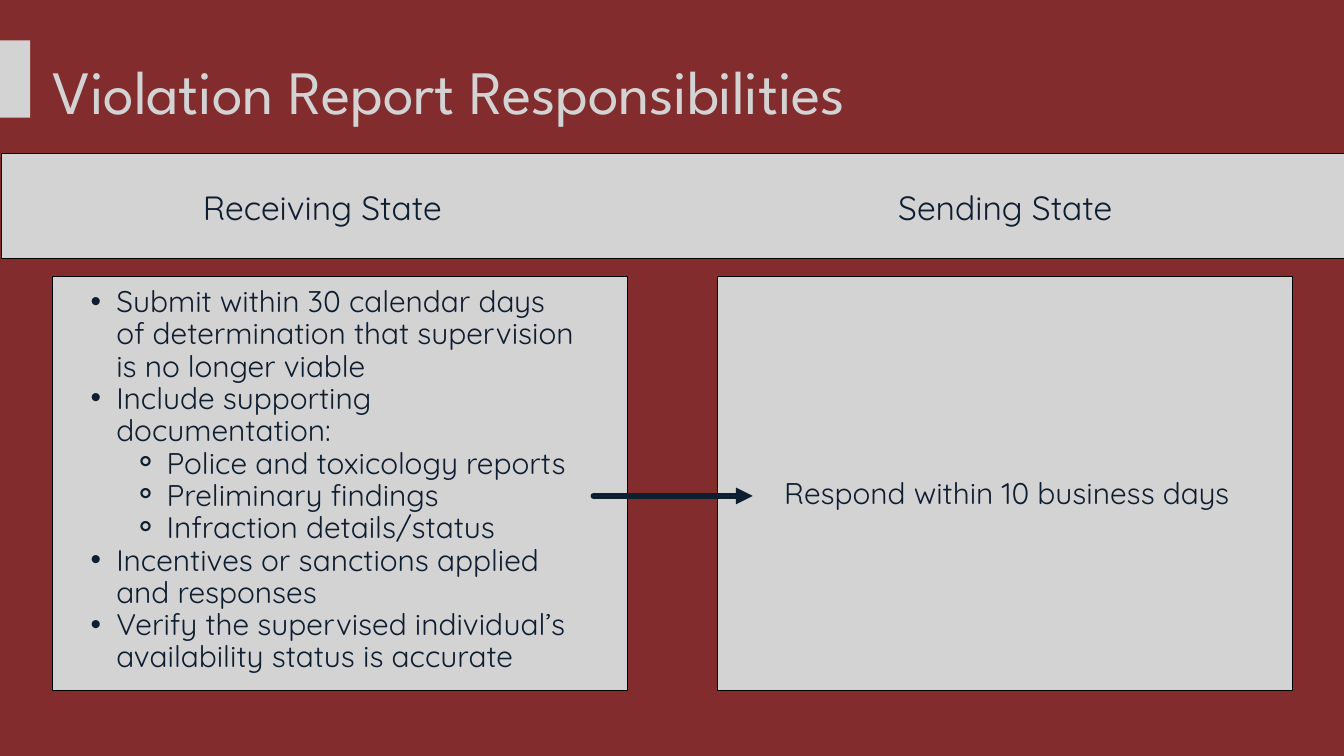
from lxml import etree
from pptx import Presentation
from pptx.dml.color import RGBColor
from pptx.enum.shapes import MSO_CONNECTOR as CONN, MSO_SHAPE as SHAPE
from pptx.enum.text import MSO_ANCHOR as ANCHOR, MSO_AUTO_SIZE as AUTO, PP_ALIGN as ALIGN
from pptx.oxml.ns import qn
from pptx.util import Inches, Pt

RED, GREY, NAVY, BLACK = "822C2E", "D3D3D3", "0E1E31", "000000"
# Paragraph level: (bullet, left margin, hanging indent)
BULLETS = {1: ("•", 0.76, -0.38), 2: ("⚬", 1.51, -0.5)}


def rgb(value):
    return RGBColor.from_string(value)


class Deck:
    head_font = "League Spartan"
    body_font = "Quicksand"

    def __init__(self, width, height):
        self.prs = Presentation()
        self.prs.slide_width, self.prs.slide_height = Inches(width), Inches(height)

    def add_slide(self, background):
        self.s = self.prs.slides.add_slide(self.prs.slide_layouts[5])
        fill = self.s.background.fill
        fill.solid()
        fill.fore_color.rgb = rgb(background)

    def frame(self, sp, anchor):
        tf = sp.text_frame
        tf.word_wrap, tf.auto_size, tf.vertical_anchor = True, AUTO.NONE, anchor
        tf.margin_left = tf.margin_top = tf.margin_right = tf.margin_bottom = 0
        return tf

    def run(self, p, text, size, font, color, spacing):
        p.line_spacing = Pt(spacing)
        r = p.add_run()
        r.text = text
        r.font.size, r.font.name = Pt(size), font
        r.font.color.rgb = rgb(color)
        return r

    def title(self, text, x, y, w, h):
        sp = self.s.shapes.title
        sp.left, sp.top, sp.width, sp.height = (Inches(v) for v in (x, y, w, h))
        p = self.frame(sp, ANCHOR.MIDDLE).paragraphs[0]
        p.alignment = ALIGN.LEFT
        r = self.run(p, text, 66, self.head_font, GREY, 71.3)
        r.font._element.set("spc", "-40")

    def panel(self, x, y, w, h, line=None):
        sp = self.s.shapes.add_shape(SHAPE.RECTANGLE, *(Inches(v) for v in (x, y, w, h)))
        sp.shadow.inherit = False
        sp.fill.solid()
        sp.fill.fore_color.rgb = rgb(GREY)
        if line:
            sp.line.color.rgb = rgb(line)
            sp.line.width = Pt(1)
        else:
            sp.line.fill.background()

    def text(self, items, x, y, w, h, size=32, spacing=34.6, align=ALIGN.LEFT):
        """Each item is a (level, text) pair; level 0 has no bullet."""
        sp = self.s.shapes.add_textbox(*(Inches(v) for v in (x, y, w, h)))
        tf = self.frame(sp, ANCHOR.TOP)
        for i, (level, words) in enumerate(items):
            p = tf.add_paragraph() if i else tf.paragraphs[0]
            p.alignment = align
            if level:
                self.bullet(p, level)
            self.run(p, words, size, self.body_font, NAVY, spacing)

    def bullet(self, p, level):
        char, margin, indent = BULLETS[level]
        p.level = level
        pPr = p._p.get_or_add_pPr()
        pPr.set("marL", str(Inches(margin)))
        pPr.set("indent", str(Inches(indent)))
        etree.SubElement(pPr, qn("a:buFont")).set("typeface", "Arial")
        etree.SubElement(pPr, qn("a:buChar")).set("char", char)

    def arrow(self, x1, y1, x2, y2):
        cx = self.s.shapes.add_connector(CONN.STRAIGHT, *(Inches(v) for v in (x1, y1, x2, y2)))
        cx.line.color.rgb = rgb(NAVY)
        cx.line.width = Pt(6)
        ln = cx.line._get_or_add_ln()
        ln.set("cap", "rnd")
        etree.SubElement(ln, qn("a:tailEnd")).set("type", "triangle")
        etree.SubElement(cx._element.spPr, qn("a:effectLst"))


def main():
    deck = Deck(20, 11.25)
    deck.add_slide(RED)

    # Title and its side tab
    deck.title("Violation Report Responsibilities", 0.78, 0.65, 18.47, 1.48)
    deck.panel(0, 0.6, 0.45, 1.15)

    # Heading band
    deck.panel(0.02, 2.29, 20, 1.56, BLACK)
    deck.text([(0, "Receiving State")], 2.72, 2.78, 4.15, 0.6, 36, 43.2, ALIGN.CENTER)
    deck.text([(0, "Sending State")], 12.96, 2.84, 4, 0.55, 36, 38.9, ALIGN.CENTER)

    # Two panels
    for x in (0.78, 10.68):
        deck.panel(x, 4.12, 8.56, 6.16, BLACK)

    # Receiving state duties
    deck.text([
        (1, "Submit within 30 calendar days of determination that supervision is no longer viable"),
        (1, "Include supporting documentation:"),
        (2, "Police and toxicology reports"),
        (2, "Preliminary findings"),
        (2, "Infraction details/status"),
        (1, "Incentives or sanctions applied and responses"),
        (1, "Verify the supervised individual’s availability status is accurate"),
    ], 0.97, 4.26, 7.65, 6.29)

    # Sending state duty
    deck.text([(0, "Respond within 10 business days")], 11.67, 7.12, 7.91, 0.48)
    deck.arrow(8.83, 7.38, 11.2, 7.38)

    deck.prs.save("out.pptx")


if __name__ == "__main__":
    main()
